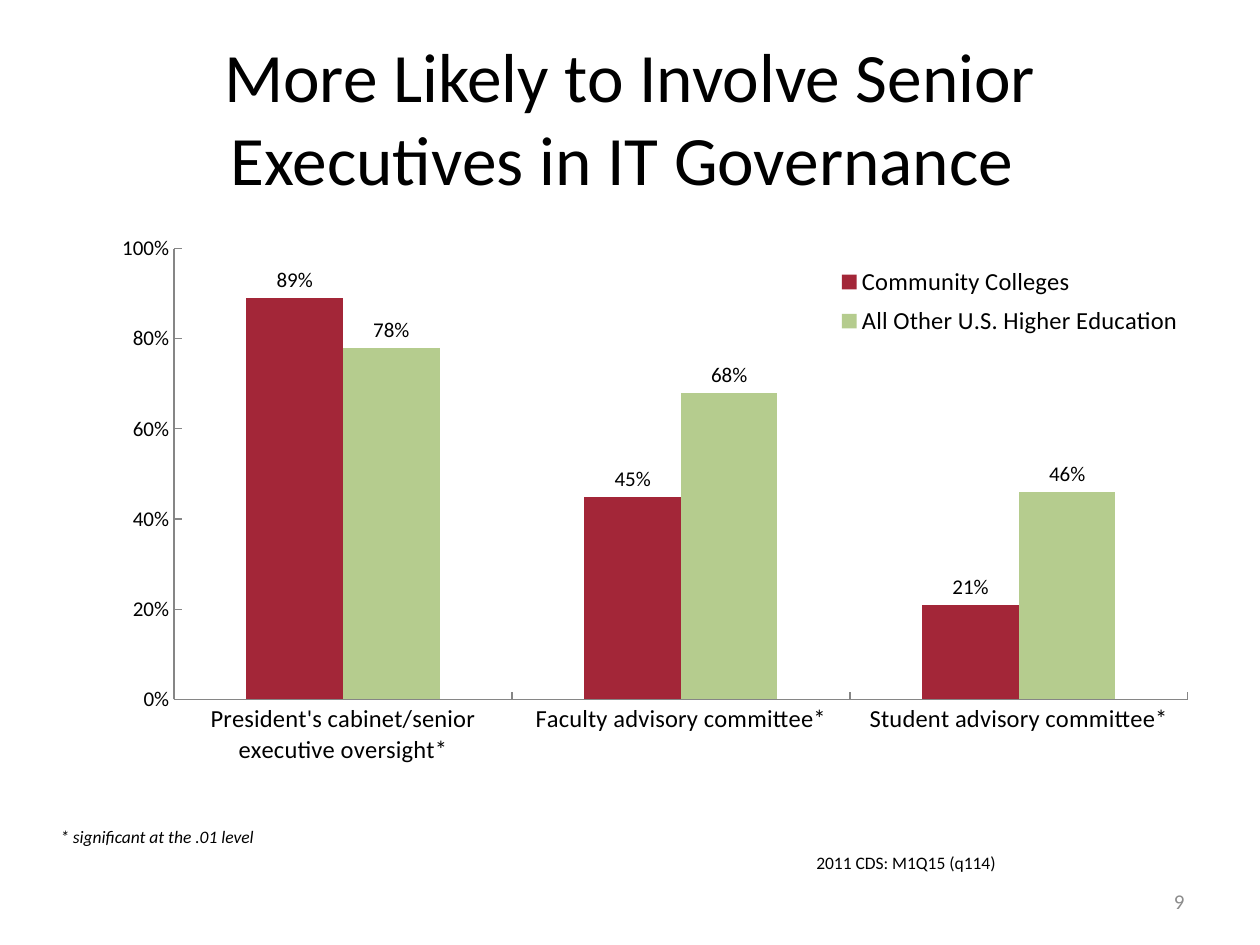
import pptx
import pptx.chart.data
import pptx.dml.color
import pptx.enum.chart
import pptx.enum.text
import pptx.oxml
import pptx.oxml.ns
import pptx.util

COLORS = {
    "text": "000000",
    "muted": "8C8C8C",
    "axis": "868686",
    "community": "A32638",
    "others": "B5CC8E",
}
ALIGN = pptx.enum.text.PP_ALIGN
ANCHOR = pptx.enum.text.MSO_ANCHOR
TICK = pptx.enum.chart.XL_TICK_MARK


class SlideBuilder:
    """Holds the style and the current slide; boxes are shares of the slide."""

    font_name = "Calibri"

    def __init__(self, deck):
        self.deck = deck
        self.slide = deck.slides.add_slide(deck.slide_layouts[6])

    def place(self, left, top, width, height):
        across, down = self.deck.slide_width, self.deck.slide_height
        return [pptx.util.Emu(round(length)) for length in
                (left * across, top * down, width * across, height * down)]

    def color(self, name):
        return pptx.dml.color.RGBColor.from_string(COLORS[name])

    def style(self, font, size, color="text", italic=False):
        font.name = self.font_name
        font.size = pptx.util.Pt(size)
        font.color.rgb = self.color(color)
        font.bold = False
        font.italic = italic

    def text(self, wording, box, size, color="text", align=ALIGN.LEFT,
             anchor=ANCHOR.TOP, italic=False):
        frame = self.slide.shapes.add_textbox(*self.place(*box)).text_frame
        frame.word_wrap = True
        frame.vertical_anchor = anchor
        paragraph = frame.paragraphs[0]
        paragraph.text = wording
        paragraph.alignment = align
        self.style(paragraph.font, size, color, italic)

    def layout(self, parent, index, box, inner=False):
        """Give a chart part a fixed place, in shares of the chart."""
        for old in parent.findall(pptx.oxml.ns.qn("c:layout")):
            parent.remove(old)
        target = '<c:layoutTarget val="inner"/>' if inner else ""
        modes = "".join(f'<c:{key}Mode val="edge"/>' for key in "xy")
        sizes = "".join(f'<c:{key} val="{share}"/>' for key, share in zip("xywh", box))
        parent.insert(index, pptx.oxml.parse_xml(
            f'<c:layout {pptx.oxml.ns.nsdecls("c")}><c:manualLayout>'
            f"{target}{modes}{sizes}</c:manualLayout></c:layout>"))

    def axis(self, axis, size):
        axis.has_major_gridlines = False
        axis.major_tick_mark = TICK.INSIDE
        axis.minor_tick_mark = TICK.NONE
        axis.format.line.color.rgb = self.color("axis")
        self.style(axis.tick_labels.font, size)

    def column_chart(self, categories, series, box, plot_box, legend_box):
        data = pptx.chart.data.CategoryChartData(number_format="0%")
        data.categories = categories
        for name, values, _ in series:
            data.add_series(name, values)
        chart = self.slide.shapes.add_chart(
            pptx.enum.chart.XL_CHART_TYPE.COLUMN_CLUSTERED,
            *self.place(*box), data).chart
        chart.has_title = False
        self.style(chart.font, 18)

        # Columns and their value labels
        plot = chart.plots[0]
        plot.gap_width = 150
        plot.overlap = 0
        plot.vary_by_categories = False
        for columns, (_, _, color) in zip(plot.series, series):
            columns.format.fill.solid()
            columns.format.fill.fore_color.rgb = self.color(color)
            labels = columns.data_labels
            labels.show_value = True
            labels.number_format = "0%"
            labels.number_format_is_linked = False
            labels.position = pptx.enum.chart.XL_LABEL_POSITION.OUTSIDE_END
            self.style(labels.font, 12)

        # Axes
        self.axis(chart.category_axis, 14)
        shares = chart.value_axis
        self.axis(shares, 12)
        shares.minimum_scale, shares.maximum_scale = 0, 1
        shares.major_unit = 0.2
        shares.tick_labels.number_format = "0%"
        shares.tick_labels.number_format_is_linked = False

        # Legend and fixed places
        chart.has_legend = True
        legend = chart.legend
        legend.position = pptx.enum.chart.XL_LEGEND_POSITION.RIGHT
        legend.include_in_layout = False
        self.style(legend.font, 14)
        self.layout(legend._element, 1, legend_box)
        self.layout(chart._chartSpace.chart.plotArea, 0, plot_box, inner=True)


def main():
    deck = pptx.Presentation()
    deck.slide_width = pptx.util.Inches(10)
    deck.slide_height = pptx.util.Inches(7.5)
    page = SlideBuilder(deck)

    # Title
    page.text("More Likely to Involve Senior Executives in IT Governance ",
              (0.05, 0.04, 0.9, 1 / 6), 39.6,
              align=ALIGN.CENTER, anchor=ANCHOR.MIDDLE)

    # Governance chart
    page.column_chart(
        ["President's cabinet/senior executive oversight*",
         "Faculty advisory committee*",
         "Student advisory committee*"],
        [("Community Colleges", (0.89, 0.45, 0.21), "community"),
         ("All Other U.S. Higher Education", (0.78, 0.68, 0.46), "others")],
        box=(0.05, 1.75 / 7.5, 0.9, 0.66),
        plot_box=(0.098, 0.045, 0.894, 0.723),
        legend_box=(0.68, 0.06, 0.31, 0.14))

    # Page number, source and significance note
    page.text("9", (0.717, 6.95 / 7.5, 0.233, 0.4 / 7.5), 12, "muted",
              ALIGN.RIGHT, ANCHOR.MIDDLE)
    page.text("2011 CDS: M1Q15 (q114)", (0.638, 6.71 / 7.5, 0.305, 0.036), 10)
    page.text("* significant at the .01 level",
              (0.038, 6.51 / 7.5, 0.355, 0.036), 10, italic=True)

    deck.save("out.pptx")


if __name__ == "__main__":
    main()
